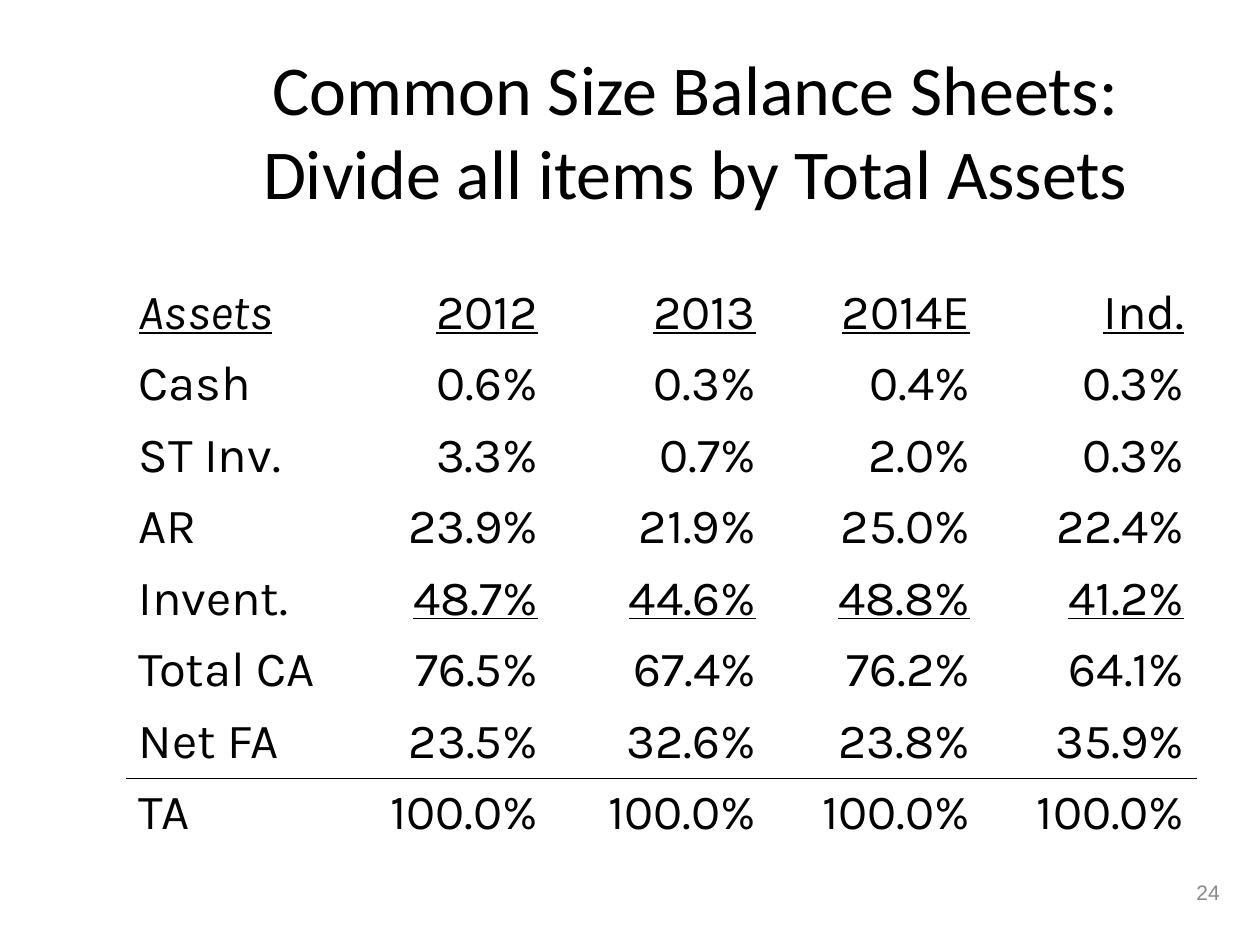
from dataclasses import dataclass

from lxml.etree import SubElement
from pptx import Presentation
from pptx.dml.color import RGBColor
from pptx.enum.text import MSO_ANCHOR as Anchor, PP_ALIGN as Align
from pptx.oxml import parse_xml
from pptx.oxml.ns import nsdecls, qn
from pptx.util import Cm, Pt


@dataclass(frozen=True)
class Theme:
    ink: str = "000000"
    muted: str = "898989"
    title_font: str = "Calibri"
    table_font: str = "Karla"
    number_font: str = "Arial"
    title_size: int = 40
    table_size: int = 28
    number_size: int = 12


THEME = Theme()
NO_GRID_STYLE = "{2D5ABB26-0587-4C30-8999-92F81FD0307C}"

TITLE_LINES = ["Common Size Balance Sheets:", "Divide all items by Total Assets"]
BALANCE_SHEET = [
    ["Assets", "2012", "2013", "2014E", "Ind."],
    ["Cash", "0.6%", "0.3%", "0.4%", "0.3%"],
    ["ST Inv.", "3.3%", "0.7%", "2.0%", "0.3%"],
    ["AR", "23.9%", "21.9%", "25.0%", "22.4%"],
    ["Invent.", "48.7%", "44.6%", "48.8%", "41.2%"],
    ["Total CA", "76.5%", "67.4%", "76.2%", "64.1%"],
    ["Net FA", "23.5%", "32.6%", "23.8%", "35.9%"],
    ["TA", "100.0%", "100.0%", "100.0%", "100.0%"],
]
COLUMN_WIDTHS = [4.32, 4.24, 4.39, 4.32, 4.32]
ROW_HEIGHT = 1.44
HEADER_ROW, INVENTORY_ROW = 0, 4
TOTAL_ROW = len(BALANCE_SHEET) - 1


def add_run(p, text, font, size, color):
    r = p.add_run()
    r.text = text
    r.font.name = font
    r.font.size = Pt(size)
    r.font.color.rgb = RGBColor.from_string(color)
    return r


def add_title(s):
    title = s.shapes.title
    title.left, title.top = Cm(3.2), Cm(0.58)
    title.width, title.height = Cm(21.64), Cm(4.06)
    tf = title.text_frame
    tf.vertical_anchor = Anchor.MIDDLE
    p = tf.paragraphs[0]
    p.alignment = Align.CENTER
    for i, line in enumerate(TITLE_LINES):
        if i:
            p.add_line_break()
        add_run(p, line, THEME.title_font, THEME.title_size, THEME.ink)


def add_border(cell, side):
    """Draw a one-point line on a side: T for top, B for bottom."""
    line = parse_xml(
        f'<a:ln{side} {nsdecls("a")} w="{Pt(1)}"><a:solidFill>'
        f'<a:srgbClr val="{THEME.ink}"/></a:solidFill></a:ln{side}>'
    )
    cell._tc.get_or_add_tcPr().insert(0, line)


def fill_cell(cell, text, row, col):
    cell.fill.background()
    p = cell.text_frame.paragraphs[0]
    p.alignment = Align.RIGHT if col else Align.LEFT
    font = add_run(p, text, THEME.table_font, THEME.table_size, THEME.ink).font
    font.italic = row == HEADER_ROW and col == 0
    font.underline = row == HEADER_ROW or (row == INVENTORY_ROW and col > 0)
    if row == TOTAL_ROW - 1:
        add_border(cell, "B")
    elif row == TOTAL_ROW:
        add_border(cell, "T")


def add_balance_table(s):
    rows, cols = len(BALANCE_SHEET), len(COLUMN_WIDTHS)
    frame = s.shapes.add_table(rows, cols, Cm(2.54), Cm(5.61),
                               Cm(sum(COLUMN_WIDTHS)), Cm(ROW_HEIGHT * rows))
    table = frame.table
    table.first_row = table.horz_banding = False
    props = table._tbl.tblPr
    style = props.find(qn("a:tableStyleId"))
    if style is None:
        style = SubElement(props, qn("a:tableStyleId"))
    style.text = NO_GRID_STYLE
    for column, width in zip(table.columns, COLUMN_WIDTHS):
        column.width = Cm(width)
    for i, values in enumerate(BALANCE_SHEET):
        table.rows[i].height = Cm(ROW_HEIGHT)
        for j, text in enumerate(values):
            fill_cell(table.cell(i, j), text, i, j)


def add_page_number(s, number):
    sp = s.shapes.add_textbox(Cm(19.56), Cm(17.35), Cm(5.28), Cm(1.27))
    tf = sp.text_frame
    tf.word_wrap = True
    tf.vertical_anchor = Anchor.MIDDLE
    p = tf.paragraphs[0]
    p.alignment = Align.RIGHT
    add_run(p, number, THEME.number_font, THEME.number_size, THEME.muted)


def main():
    prs = Presentation()
    prs.slide_width, prs.slide_height = Cm(25.4), Cm(19.05)
    s = prs.slides.add_slide(prs.slide_layouts.get_by_name("Title Only"))
    add_title(s)
    add_balance_table(s)
    add_page_number(s, "24")
    prs.save("out.pptx")


if __name__ == "__main__":
    main()
